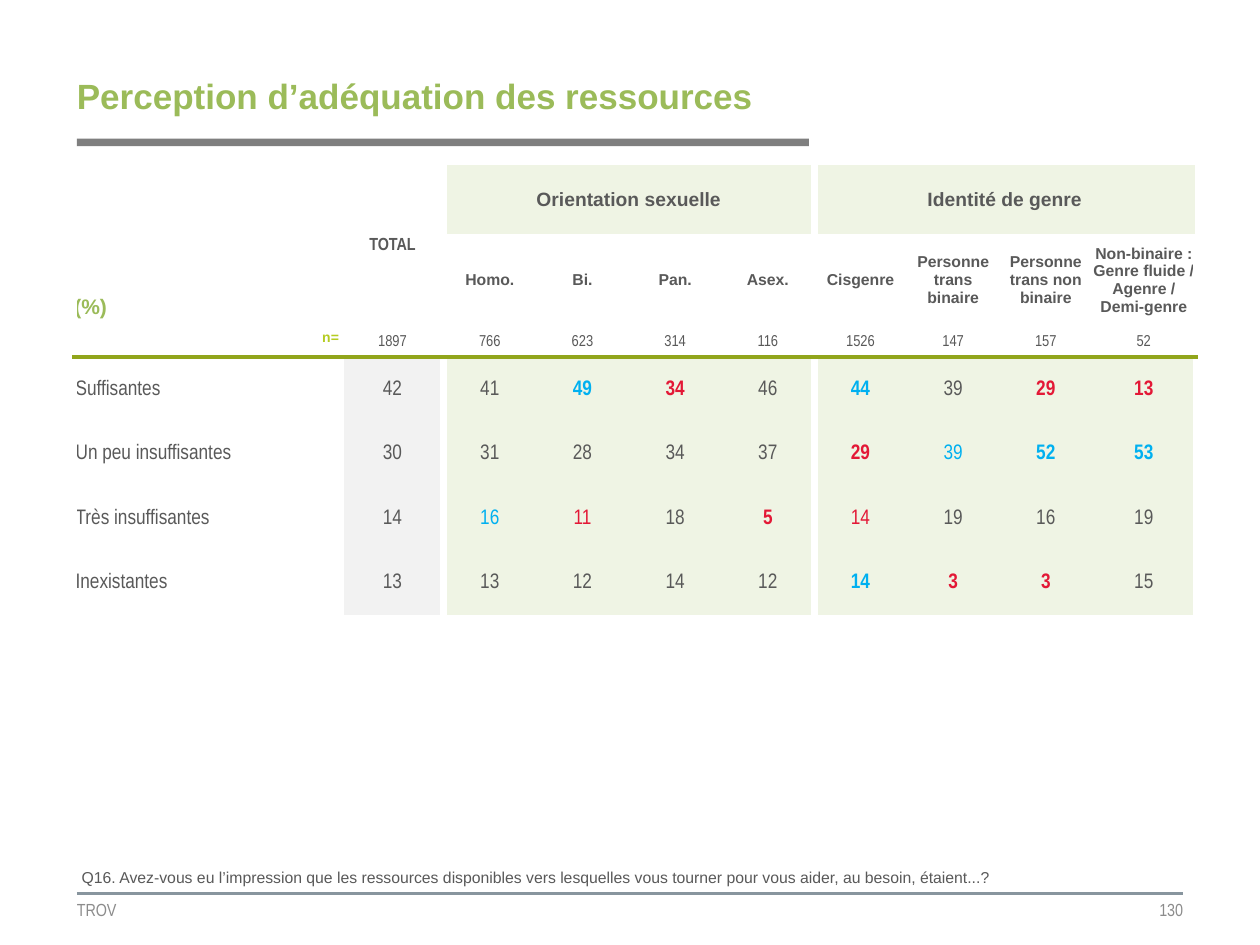
from dataclasses import dataclass
from typing import NamedTuple

from lxml import etree
from pptx import Presentation
from pptx import util as u
from pptx.dml.color import RGBColor
from pptx.enum import shapes, text
from pptx.oxml import ns

GRID = u.Inches(0.1)
PAGE_COLUMNS, PAGE_ROWS = 100, 75
COLORS = {
    "white": "FFFFFF", "ink": "595959", "muted": "8C8C8C", "bar": "7F7F7F",
    "title": "9BBB59", "count": "B5CC22", "rule": "91A51B", "footer": "88959E",
    "total": "F2F2F2", "group": "EFF4E4", "high": "00B0F0", "low": "E31836",
}
NARROW, SANS = "Arial Narrow", "Arial"
LEFT, MIDDLE, RIGHT = text.PP_ALIGN.LEFT, text.PP_ALIGN.CENTER, text.PP_ALIGN.RIGHT


@dataclass(frozen=True)
class Style:
    size: float
    color: str = "ink"
    bold: bool = False
    font: str = NARROW
    align: text.PP_ALIGN = MIDDLE
    spacing: float = 1.0


@dataclass(frozen=True)
class Label:
    words: str
    left: float
    top: float
    width: float
    height: float
    style: Style
    inset: tuple = (0, 0)


class Group(NamedTuple):
    words: str
    first: int
    last: int


class Answer(NamedTuple):
    words: str
    scores: str


MARKS = {"H": ("high", True), "h": ("high", False), "L": ("low", True), "l": ("low", False)}
FOOTER = Style(10, "muted", align=LEFT)
LABELS = [
    Label("TROV", 6.1, 70.9, 28, 2.6, FOOTER),
    Label("130", 65.5, 70.9, 28.4, 2.6, Style(10, "muted", align=RIGHT)),
    Label("Perception d’adéquation des ressources", 6.1, 4.1, 71.5, 6.9,
          Style(20, "title", True, SANS, LEFT)),
    Label("Q16. Avez-vous eu l’impression que les ressources disponibles vers lesquelles "
          "vous tourner pour vous aider, au besoin, étaient...?",
          5.5, 68.4, 85.5, 2.5, Style(9, font=SANS, align=LEFT), (1, 0.5)),
]
GROUPS = [Group("Orientation sexuelle", 2, 5), Group("Identité de genre", 6, 9)]
PROFILES = ["Homo.", "Bi.", "Pan.", "Asex.", "Cisgenre", "Personne trans binaire",
            "Personne trans non binaire", "Non-binaire : Genre fluide / Agenre / Demi-genre"]
COUNTS = "1897 766 623 314 116 1526 147 157 52"
ANSWERS = [
    Answer("Suffisantes", "42 41 49H 34L 46 44H 39 29L 13L"),
    Answer("Un peu insuffisantes", "30 31 28 34 37 29L 39h 52H 53H"),
    Answer("Très insuffisantes", "14 16h 11l 18 5L 14l 19 16 19"),
    Answer("Inexistantes", "13 13 12 14 12 14H 3L 3L 15"),
]
TABLE_LEFT, TABLE_TOP, TABLE_WIDTH = 5.9, 13.1, 89
ANSWER_WIDTH, TOTAL_WIDTH, LAST_WIDTH = 21.2, 8.1, 8.2
PROFILE_WIDTH = (TABLE_WIDTH - ANSWER_WIDTH - TOTAL_WIDTH - LAST_WIDTH) / 7
COLUMNS = [ANSWER_WIDTH, TOTAL_WIDTH] + [PROFILE_WIDTH] * 7 + [LAST_WIDTH]
ROWS = [3.5, 1.4, 7.3, 2.5] + [5.12] * len(ANSWERS)
COUNT_ROW, FIRST_ANSWER = 3, 4
LEFT_EDGES = {0: 3, 1: 3, 2: 4.5, 6: 4.5}
RIGHT_EDGES = {0: 3, 1: 4.5, 5: 4.5, 9: 3}


def grid(cells: float) -> u.Emu:
    return u.Emu(round(cells * GRID))


def paint(color_format, name: str) -> None:
    color_format.rgb = RGBColor.from_string(COLORS[name])


def write(frame, words: str, style: Style) -> None:
    para = frame.paragraphs[0]
    para.text = words
    para.alignment = style.align
    para.line_spacing = style.spacing
    para.font.size = u.Pt(style.size)
    para.font.name = style.font
    para.font.bold = style.bold
    paint(para.font.color, style.color)


def add_label(page, label: Label) -> None:
    box = page.shapes.add_textbox(*map(grid, (label.left, label.top, label.width, label.height)))
    frame = box.text_frame
    frame.word_wrap = True
    frame.vertical_anchor = text.MSO_ANCHOR.MIDDLE
    frame.margin_left = frame.margin_right = grid(label.inset[0])
    frame.margin_top = frame.margin_bottom = grid(label.inset[1])
    write(frame, label.words, label.style)


def add_rules(page) -> None:
    line = page.shapes.add_connector(
        shapes.MSO_CONNECTOR.STRAIGHT, *map(grid, (6.1, 70.9, 93.9, 70.9)))
    paint(line.line.color, "footer")
    line.line.width = u.Pt(1.5)
    etree.SubElement(line._element.spPr, ns.qn("a:effectLst"))
    bar = page.shapes.add_shape(
        shapes.MSO_SHAPE.RECTANGLE, *map(grid, (6.1, 11, 58.1, 0.6)))
    bar.shadow.inherit = False
    bar.fill.solid()
    paint(bar.fill.fore_color, "bar")
    bar.line.fill.background()


def set_borders(cell, row: int, column: int) -> None:
    edges = {
        "lnL": (LEFT_EDGES.get(column), "white"),
        "lnR": (RIGHT_EDGES.get(column), "white"),
        "lnT": (3 if row == FIRST_ANSWER else None, "rule"),
        "lnB": (3 if row == COUNT_ROW else None, "rule"),
    }
    properties = cell._tc.get_or_add_tcPr()
    for position, (tag, (width, color)) in enumerate(edges.items()):
        line = etree.Element(ns.qn(f"a:{tag}"), w=str(u.Pt(width or 0)))
        if width:
            fill = etree.SubElement(line, ns.qn("a:solidFill"))
            etree.SubElement(fill, ns.qn("a:srgbClr"), val=COLORS[color])
        else:
            etree.SubElement(line, ns.qn("a:noFill"))
        properties.insert(position, line)


def set_cell(table, row: int, column: int, words: str, style: Style) -> None:
    cell = table.cell(row, column)
    cell.vertical_anchor = text.MSO_ANCHOR.MIDDLE
    cell.margin_left = cell.margin_right = cell.margin_top = grid(0.1)
    write(cell.text_frame, words, style)


def prepare_cells(table) -> None:
    for row, height in enumerate(ROWS):
        table.rows[row].height = grid(height)
        for column, width in enumerate(COLUMNS):
            table.columns[column].width = grid(width)
            cell = table.cell(row, column)
            cell.margin_left = cell.margin_right = cell.margin_top = cell.margin_bottom = 0
            shaded = column > 0 and row >= FIRST_ANSWER or column > 1 and row < 2
            if shaded:
                cell.fill.solid()
                paint(cell.fill.fore_color, "total" if column == 1 else "group")
            else:
                cell.fill.background()
            set_borders(cell, row, column)


def add_results(page) -> None:
    frame = page.shapes.add_table(
        len(ROWS), len(COLUMNS),
        *map(grid, (TABLE_LEFT, TABLE_TOP, TABLE_WIDTH, sum(ROWS))))
    table = frame.table
    table.first_row = table.horz_banding = False
    table._tbl.tblPr.find(ns.qn("a:tableStyleId")).text = "{2D5ABB26-0587-4C30-8999-92F81FD0307C}"
    prepare_cells(table)
    table.cell(1, 0).merge(table.cell(2, 0))
    table.cell(0, 1).merge(table.cell(2, 1))
    set_cell(table, 0, 1, "TOTAL", Style(10, bold=True))
    for group in GROUPS:
        table.cell(0, group.first).merge(table.cell(1, group.last))
        set_cell(table, 0, group.first, group.words, Style(11, bold=True, font=SANS))
    for column, words in enumerate(PROFILES, 2):
        set_cell(table, 2, column, words, Style(9, bold=True, font=SANS))
    set_cell(table, 1, 0, "(%)", Style(12, "title", True, SANS, LEFT, 0.95))
    set_cell(table, COUNT_ROW, 0, "n=", Style(8, "count", True, SANS, RIGHT, 0.95))
    for row, margins in ((1, (0, 0.5)), (COUNT_ROW, (0, 0.5))):
        cell = table.cell(row, 0)
        cell.margin_left, cell.margin_right = 0, grid(0.2 if row == COUNT_ROW else 0)
        cell.margin_top, cell.margin_bottom = map(grid, margins)
    table.cell(1, 0).vertical_anchor = text.MSO_ANCHOR.BOTTOM
    for column, count in enumerate(COUNTS.split(), 1):
        set_cell(table, COUNT_ROW, column, count, Style(9))
    for row, answer in enumerate(ANSWERS, FIRST_ANSWER):
        set_cell(table, row, 0, answer.words, Style(12, align=LEFT))
        for column, score in enumerate(answer.scores.split(), 1):
            color, bold = MARKS.get(score[-1], ("ink", False))
            set_cell(table, row, column, score.rstrip("HhLl"), Style(12, color, bold))


def main() -> None:
    deck = Presentation()
    deck.slide_width, deck.slide_height = grid(PAGE_COLUMNS), grid(PAGE_ROWS)
    page = deck.slides.add_slide(deck.slide_layouts[6])
    add_rules(page)
    for label in LABELS:
        add_label(page, label)
    add_results(page)
    deck.save("out.pptx")


if __name__ == "__main__":
    main()
